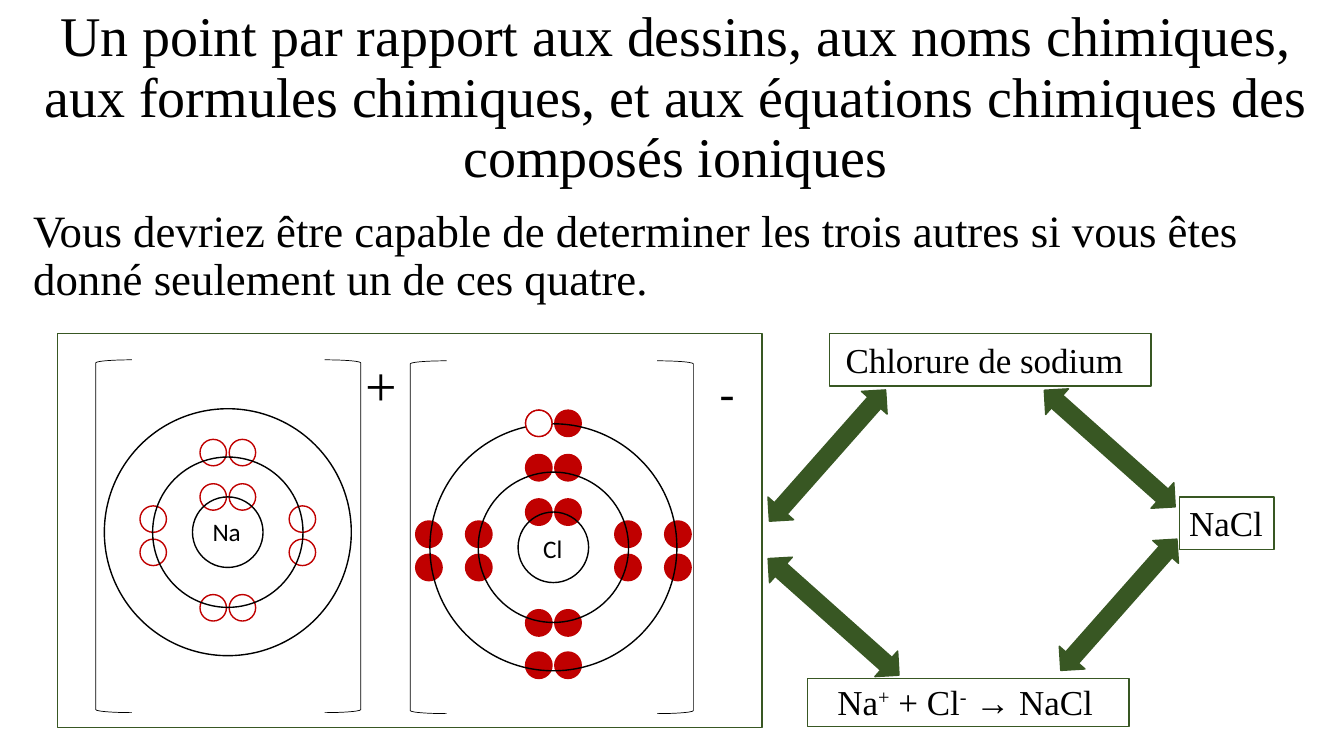
from pptx import Presentation
from pptx.dml.color import RGBColor
from pptx.enum.shapes import MSO_SHAPE
from pptx.enum.text import MSO_ANCHOR, MSO_AUTO_SIZE, PP_ALIGN
from pptx.util import Inches, Pt

HEADING = ("Un point par rapport aux dessins, aux noms chimiques, aux formules chimiques, "
           "et aux équations chimiques des composés ioniques")
INSTRUCTION = ("Vous devriez être capable de determiner les trois autres "
               "si vous êtes donné seulement un de ces quatre.")

COLORS = {"ink": "000000", "paper": "FFFFFF", "electron": "C00000", "link": "385723"}
SERIF, SANS = "Times New Roman", "Calibri"

COLUMNS, ROWS = 160, 90
CELL = Inches(13.333) / COLUMNS

PAIR = 1.74
SIDE_ROWS = (-1.56, 2.4)
ELECTRON = 3.15
RINGS = (8.4, 17.9, 29.4)
SHELLS = [
    {"above": -4.2},
    {"above": -9.48, "below": 9, "side": 8.88},
    {"above": -14.76, "below": 14.04, "side": 14.82},
]
BRACKET = (4.32, 42)

IONS = [
    {"symbol": "Na", "label": (24.12, 60.84, 5.88, 4.8), "center": (27.12, 63.36),
     "shells": 2, "fill": "paper", "brackets": (11.4, 38.64), "top": 42.84,
     "charge": "+", "charge_size": 40, "charge_box": (42.36, 41.16, 6.24, 9.24)},
    {"symbol": "Cl", "label": (63.48, 62.88, 4.68, 4.8), "center": (65.88, 65.16),
     "shells": 3, "fill": "electron", "brackets": (48.84, 78.24), "top": 42.96,
     "charge": "-", "charge_size": 32, "charge_box": (84.48, 42.84, 4.2, 7.68)},
]

DRAWING_FRAME = (6.84, 39.72, 83.88, 46.92)
REPRESENTATIONS = [
    (["Chlorure de sodium"], (99.48, 39.72, 35.88, 6.24), (98.76, 39.72, 38.28, 6.24)),
    (["NaCl"], (140.4, 59.16, 11.28, 6.24), (140.4, 59.16, 11.28, 6.24)),
    (["Na", "+", " + Cl", "-", " → NaCl"], (98.52, 80.4, 33.48, 6.24),
     (96.12, 80.76, 38.28, 5.76)),
]
LINK = (20.88, 4.08)
LINKS = [(121.68, 51.36, 221.7), (88.08, 52.2, 311.5),
         (88.8, 71.4, 221.7), (122.76, 69.96, 311.5)]

deck = Presentation()
deck.slide_width, deck.slide_height = round(COLUMNS * CELL), round(ROWS * CELL)
slide = deck.slides.add_slide(deck.slide_layouts[5])


def cells(box):
    return [round(length * CELL) for length in box]


def write(text, box, size, font=SERIF, target=None, align=PP_ALIGN.LEFT,
          anchor=MSO_ANCHOR.TOP, wrap=False, spacing=None):
    left, top, width, height = cells(box)
    if target is None:
        target = slide.shapes.add_textbox(left, top, width, height)
    target.left, target.top, target.width, target.height = left, top, width, height
    frame = target.text_frame
    frame.word_wrap = wrap
    frame.auto_size = MSO_AUTO_SIZE.NONE if wrap else MSO_AUTO_SIZE.SHAPE_TO_FIT_TEXT
    frame.vertical_anchor = anchor
    paragraph = frame.paragraphs[0]
    paragraph.alignment = align
    if spacing:
        paragraph.line_spacing = spacing
    for index, part in enumerate([text] if isinstance(text, str) else text):
        run = paragraph.add_run()
        run.text = part
        run.font.size, run.font.name = Pt(size), font
        run.font.color.rgb = RGBColor.from_string(COLORS["ink"])
        if index % 2:
            run._r.get_or_add_rPr().set("baseline", "30000")


def draw(kind, box, line, fill=None, weight=1, rotation=0, flipped=False):
    shape = slide.shapes.add_shape(kind, *cells(box))
    shape.shadow.inherit = False
    shape.rotation = rotation
    if fill:
        shape.fill.solid()
        shape.fill.fore_color.rgb = RGBColor.from_string(COLORS[fill])
    else:
        shape.fill.background()
    shape.line.color.rgb = RGBColor.from_string(COLORS[line])
    shape.line.width = Pt(weight)
    if flipped:
        shape._element.spPr.xfrm.set("flipH", "1")


def centered(x, y, width, height):
    return x - width / 2, y - height / 2, width, height


def draw_electron(center, offset, fill):
    x, y = center[0] + offset[0], center[1] + offset[1]
    draw(MSO_SHAPE.OVAL, centered(x, y, ELECTRON, ELECTRON), "electron", fill)


def electron_offsets(shell):
    pairs = [(x, shell[end]) for end in ("above", "below") if end in shell
             for x in (-PAIR, PAIR)]
    sides = [(x, y) for x in (-shell["side"], shell["side"])
             for y in SIDE_ROWS] if "side" in shell else []
    return pairs + sides


def draw_ion(ion):
    write(ion["symbol"], ion["label"], 18, font=SANS)
    for shell in SHELLS[:ion["shells"]]:
        for offset in electron_offsets(shell):
            draw_electron(ion["center"], offset, ion["fill"])
    for ring in RINGS:
        draw(MSO_SHAPE.OVAL, centered(*ion["center"], ring, ring), "ink")
    for left, flipped in zip(ion["brackets"], (False, True)):
        draw(MSO_SHAPE.LEFT_BRACKET, (left, ion["top"], *BRACKET), "ink",
             weight=0.5, flipped=flipped)
    write(ion["charge"], ion["charge_box"], ion["charge_size"])


write(HEADING, (2.76, 1.08, 155.28, 21.48), 40, target=slide.shapes.title,
      align=PP_ALIGN.CENTER, anchor=MSO_ANCHOR.MIDDLE, wrap=True, spacing=0.9)
write(INSTRUCTION, (2.76, 24.24, 155.28, 12.72), 32, wrap=True, spacing=0.9)

for ion in IONS:
    draw_ion(ion)
draw_electron(IONS[1]["center"], (-PAIR, SHELLS[2]["above"]), "paper")

for wording, text_box, border in REPRESENTATIONS:
    write(wording, text_box, 25)
    draw(MSO_SHAPE.RECTANGLE, border, "link")
draw(MSO_SHAPE.RECTANGLE, DRAWING_FRAME, "link")

for left, top, angle in LINKS:
    draw(MSO_SHAPE.LEFT_RIGHT_ARROW, (left, top, *LINK), "link", "link", rotation=angle)

deck.save("out.pptx")
